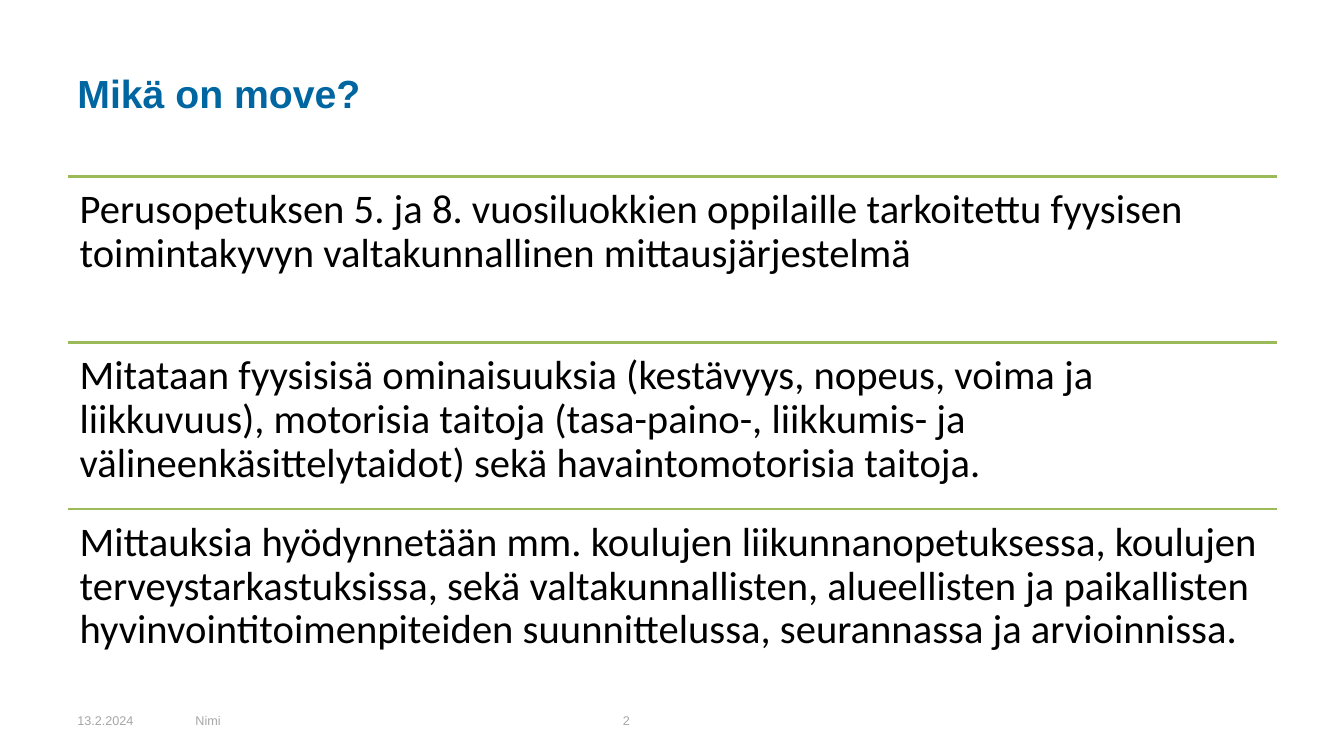
from dataclasses import dataclass

from lxml import etree
from pptx import Presentation
from pptx.dml.color import RGBColor
from pptx.enum.shapes import MSO_CONNECTOR
from pptx.enum.text import MSO_ANCHOR
from pptx.oxml.ns import qn
from pptx.slide import Slide
from pptx.util import Inches, Pt

BLUE = RGBColor(0x00, 0x66, 0xA1)
GREEN = RGBColor(0x9B, 0xBB, 0x59)
GREY = RGBColor(0xA6, 0xA6, 0xA6)
BLACK = RGBColor(0x00, 0x00, 0x00)
WHITE = RGBColor(0xFF, 0xFF, 0xFF)

STRAIGHT = MSO_CONNECTOR.STRAIGHT
TOP = MSO_ANCHOR.TOP
MIDDLE = MSO_ANCHOR.MIDDLE

# Grid: one wide column, three equal rows
WIDE, HIGH = 13.33, 7.5
LEFT, SPAN = 0.67, 12.0
START, ROW = 1.75, 1.65
FOOT, DEPTH = 6.95, 0.4


@dataclass(frozen=True)
class Field:
    text: str
    left: float
    width: float


FIELDS = [
    Field("13.2.2024", LEFT, 1.17),
    Field("Nimi", 1.84, 4.22),
    Field("2", 6.08, 3.11),
]

POINTS = [
    "Perusopetuksen 5. ja 8. vuosiluokkien oppilaille tarkoitettu fyysisen "
    "toimintakyvyn valtakunnallinen mittausjärjestelmä",
    "Mitataan fyysisisä ominaisuuksia (kestävyys, nopeus, voima ja liikkuvuus), "
    "motorisia taitoja (tasa-paino-, liikkumis- ja välineenkäsittelytaidot) "
    "sekä havaintomotorisia taitoja.",
    "Mittauksia hyödynnetään mm. koulujen liikunnanopetuksessa, koulujen "
    "terveystarkastuksissa, sekä valtakunnallisten, alueellisten ja paikallisten "
    "hyvinvointitoimenpiteiden suunnittelussa, seurannassa ja arvioinnissa.",
]


def add_text(slide: Slide, text: str, left: float, top: float, width: float,
             height: float, *, size: float, color: RGBColor,
             face: str = "Arial", bold: bool = False,
             anchor: MSO_ANCHOR = MIDDLE, inset: float | None = None,
             pitch: float = 1.0, after: float = 0) -> None:
    box = slide.shapes.add_textbox(
        Inches(left), Inches(top), Inches(width), Inches(height))
    frame = box.text_frame
    frame.word_wrap = True
    frame.vertical_anchor = anchor
    if inset is not None:
        frame.margin_left = frame.margin_right = Inches(inset)
        frame.margin_top = frame.margin_bottom = Inches(inset)
    para = frame.paragraphs[0]
    para.line_spacing = pitch
    para.space_after = Pt(after)
    run = para.add_run()
    run.text = text
    run.font.name = face
    run.font.size = Pt(size)
    run.font.bold = bold
    run.font.color.rgb = color


def add_rule(slide: Slide, top: float) -> None:
    rule = slide.shapes.add_connector(
        STRAIGHT, Inches(LEFT), Inches(top), Inches(LEFT + SPAN), Inches(top))
    rule.line.color.rgb = GREEN
    rule.line.width = Pt(2)
    etree.SubElement(rule._element.spPr, qn("a:effectLst"))


def main() -> None:
    deck = Presentation()
    deck.slide_width, deck.slide_height = Inches(WIDE), Inches(HIGH)
    slide = deck.slides.add_slide(deck.slide_layouts[6])
    slide.background.fill.solid()
    slide.background.fill.fore_color.rgb = WHITE

    # Title
    add_text(slide, "Mikä on move?", LEFT, 0.3, SPAN, 1.25,
             size=28, color=BLUE, bold=True)

    # Footer
    for field in FIELDS:
        add_text(slide, field.text, field.left, FOOT, field.width, DEPTH,
                 size=9, color=GREY, after=6)

    # Ruled rows
    for index, point in enumerate(POINTS):
        top = START + index * ROW
        add_rule(slide, top)
        add_text(slide, point, LEFT, top, SPAN, ROW, size=29, color=BLACK,
                 face="Calibri", anchor=TOP, inset=0.12, pitch=0.9)

    deck.save("out.pptx")


if __name__ == "__main__":
    main()
